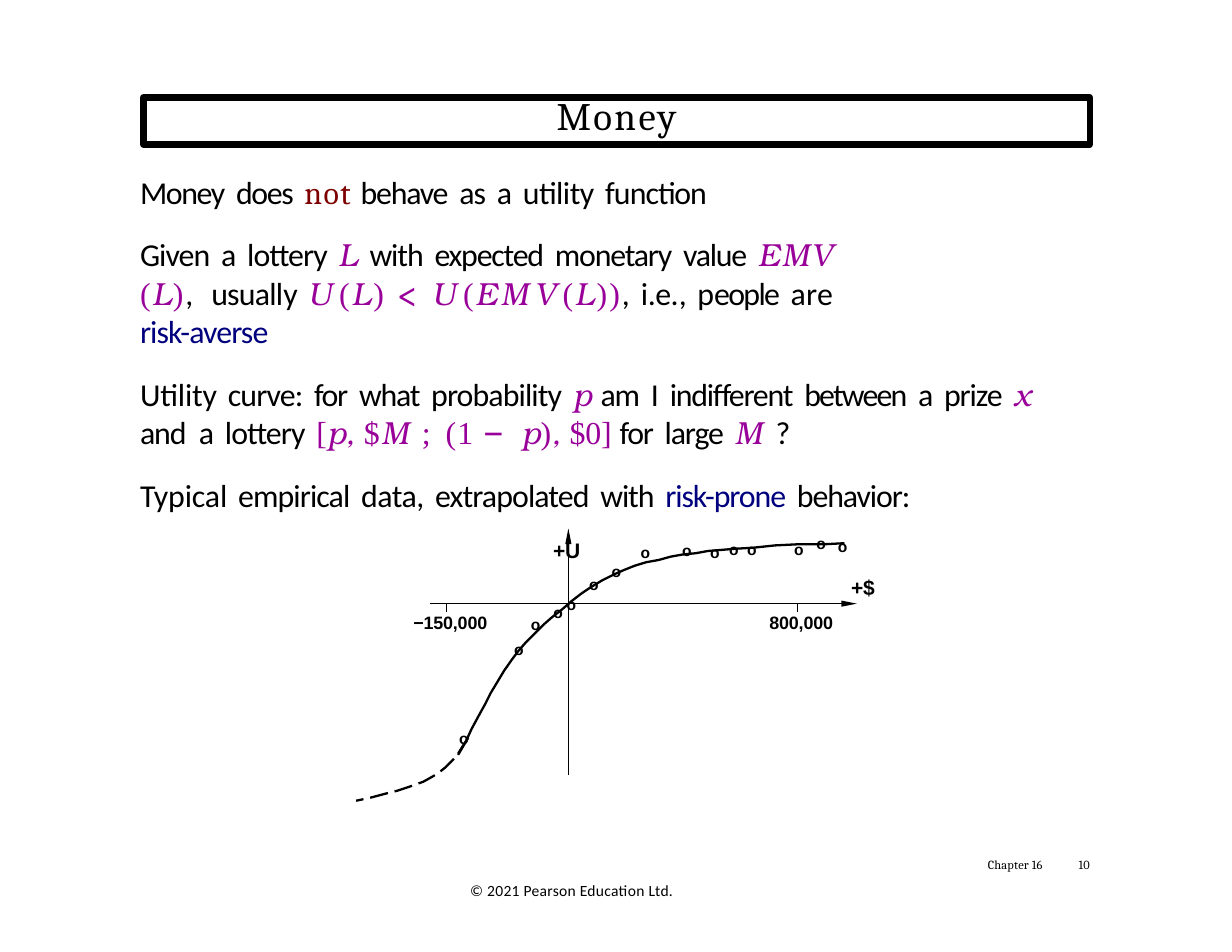
import lxml.etree
import pptx
import pptx.dml.color
import pptx.enum.dml
import pptx.enum.shapes
import pptx.enum.text
import pptx.oxml.ns
import pptx.util

COLUMNS, ROWS = 1100, 850
CELL = pptx.util.Inches(0.01)
CENTER = pptx.enum.text.PP_ALIGN.CENTER
BLACK, NAVY, MAROON, PURPLE = "000000", "00007E", "7E0000", "990099"
WORD_GAP = 2.2

STYLES = {
    "plain": ({"name": "Calibri", "size": 20.5}, BLACK),
    "term": ({"name": "Calibri", "size": 20.5}, NAVY),
    "stress": ({"name": "Cambria", "size": 20.5}, MAROON),
    "math": ({"name": "TeX Gyre Bonum", "size": 20.5, "italic": True}, PURPLE),
    "upright": ({"name": "Times New Roman", "size": 20.5}, PURPLE),
    "minus": ({"name": "DejaVu Sans Mono", "size": 20.5}, PURPLE),
    "title": ({"name": "Cambria", "size": 25}, BLACK),
    "axis": ({"name": "Arial", "size": 13.5, "bold": True}, BLACK),
    "tick": ({"name": "Arial", "size": 11.5, "bold": True}, BLACK),
    "marker": ({"name": "Arial", "size": 10, "bold": True}, BLACK),
    "footer": ({"name": "Cambria", "size": 8}, BLACK),
    "copyright": ({"name": "Calibri", "size": 10}, BLACK),
}

CLAIM = [("plain", "Money does ", -0.9), ("stress", "not ", 0.9), ("plain", "behave ", -0.8),
         ("plain", "as a ", -0.6), ("plain", "utility ", -0.3), ("plain", "function", -0.6)]
LOTTERY = [
    ("plain", "Given a lottery ", -0.6), ("math", "L ", 0.9), ("plain", "with ", -0.7),
    ("plain", "expected monetary value ", -0.8), ("math", "EMV ", 1.4), ("upright", "(", 1.2),
    ("math", "L", 1.2), ("upright", ")", 1.2), ("plain", ",", 1.2), ("plain", " ", 5.7),
    ("plain", "usuall", -0.5), ("plain", "y ", -0.6), ("math", "U ", -1.1), ("upright", "(", 1.3),
    ("math", "L", 1.9), ("upright", ") ", 1.3), ("math", "< ", 2.4), ("math", "U ", -1.1),
    ("upright", "(", 1.3), ("math", "E", 2.2), ("math", "M", 4), ("math", "V ", -2.1),
    ("upright", "(", 1.3), ("math", "L", 1.9), ("upright", "))", 1.3), ("plain", ", ", 0.2),
    ("plain", "i.e.", -0.3), ("plain", ", ", -0.2), ("plain", "p", -0.4),
    ("plain", "eople a", -1.1), ("plain", "r", -0.9), ("plain", "e ", -1.2),
    ("term", "risk-averse", -0.6),
]
CURVE_QUESTION = [
    ("plain", "Utility ", -0.1), ("plain", "curve: ", -0.6), ("plain", "for ", -0.9),
    ("plain", "what ", -0.8), ("plain", "probability ", -0.6), ("math", "p ", -0.6),
    ("plain", "am ", -0.8), ("plain", "I ", 0.1), ("plain", "indifferent ", -0.8),
    ("plain", "between ", -1.2), ("plain", "a ", -0.6), ("plain", "prize ", -0.7),
    ("math", "x ", 0.4), ("plain", "and", -0.7), ("plain", " ", 3.3),
    ("plain", "a lottery ", -0.6), ("upright", "[", -1.1), ("math", "p, ", -0.5),
    ("upright", "$", 1.1), ("math", "M ", 1.1), ("upright", "; ", 2.2), ("upright", "(1 ", 0.8),
    ("minus", "− ", -0.5), ("math", "p", -0.5), ("upright", ")", -0.5), ("math", ", ", -0.5),
    ("upright", "$0] ", -0.1), ("plain", "for ", -0.9), ("plain", "large ", -0.7),
    ("math", "M ", 1.2), ("plain", "?", -0.3),
]
DATA_NOTE = [("plain", "Typical ", -0.1), ("plain", "empirical ", -0.6), ("plain", "data, ", -0.3),
             ("plain", "extrapolated ", -0.6), ("plain", "with ", -0.7),
             ("term", "risk-prone ", -0.7), ("plain", "behavior:", -0.7)]

BODY = [
    (CLAIM, 0, {}),
    (LOTTERY, 210, {"space_before": pptx.util.Pt(15.2), "line_spacing": 1.01}),
    (CURVE_QUESTION, 30, {"space_before": pptx.util.Pt(15.3), "line_spacing": 1.01}),
    (DATA_NOTE, 0, {"space_before": pptx.util.Pt(15.6)}),
    ([("axis", "+U", -0.1)], 89, {"space_before": pptx.util.Pt(15.1), "alignment": CENTER}),
]

MARKERS = [(409, 649), (458, 569), (473, 547), (493, 536), (505, 529), (525, 511), (545, 500),
           (571, 483), (608, 481), (633, 483), (650, 480), (666, 480), (708, 480), (728, 475),
           (747, 477)]
UTILITY_CURVE = [
    (409, 674), (412, 669), (416, 662), (421, 651), (428, 638), (433, 629), (438, 619), (444, 609),
    (450, 599), (457, 589), (463, 581), (470, 573), (478, 565), (485, 558), (493, 551), (502, 544),
    (510, 537), (519, 530), (528, 524), (538, 518), (548, 513), (557, 509), (567, 505), (577, 502),
    (588, 500), (599, 497), (610, 495), (621, 494), (632, 492), (644, 491), (656, 490), (673, 489),
    (692, 487), (712, 486), (735, 486), (754, 485)]
EXTRAPOLATION = [
    (418, 659), (414, 665), (409, 673), (406, 677), (402, 681), (398, 685), (393, 689), (387, 693),
    (378, 698), (367, 702), (355, 706), (343, 709), (332, 712), (318, 715)]


def colour(value):
    return pptx.dml.color.RGBColor.from_string(value)


def apply(target, values):
    for name, value in values.items():
        setattr(target, name, value)


def add_span(para, style, words, spacing):
    font, ink = STYLES[style]
    span = para.add_run()
    span.text = words
    apply(span.font, {**font, "size": pptx.util.Pt(font["size"])})
    span.font.color.rgb = colour(ink)
    span.font._element.set("spc", str(round(spacing * 100)))


def add_prose(para, style, words, spacing):
    for index, word in enumerate(words.split(" ")):
        if index:
            add_span(para, style, " ", max(WORD_GAP, spacing))
        if word:
            add_span(para, style, word, spacing)


def fill_text(box, paragraphs, inset=(1, 0)):
    frame = box.text_frame
    left, top = inset
    apply(frame, {"word_wrap": True, "vertical_anchor": pptx.enum.text.MSO_ANCHOR.TOP,
                  "margin_left": left * CELL, "margin_top": top * CELL,
                  "margin_right": 0, "margin_bottom": 0})
    for index, (spans, right_margin, values) in enumerate(paragraphs):
        para = frame.add_paragraph() if index else frame.paragraphs[0]
        apply(para, values)
        if right_margin:
            para._p.get_or_add_pPr().set("marR", str(right_margin * CELL))
        for span in spans:
            add = add_prose if span[0] in ("plain", "term") else add_span
            add(para, *span)


def add_text(page, place, paragraphs, inset=(1, 0)):
    box = page.shapes.add_textbox(*(n * CELL for n in place))
    fill_text(box, paragraphs, inset)


def add_label(page, place, style, words, spacing, inset=(1, 1), **values):
    add_text(page, place, [([(style, words, spacing)], 0, values)], inset)


def add_title(page):
    place = (128, 87, 845, 42)
    box = page.shapes.add_shape(pptx.enum.shapes.MSO_SHAPE.RECTANGLE, *(n * CELL for n in place))
    box.shadow.inherit = False
    box.fill.background()
    box.line.color.rgb = colour(BLACK)
    box.line.width = pptx.util.Pt(4.08)
    values = {"alignment": CENTER, "line_spacing": pptx.util.Pt(26.1)}
    fill_text(box, [([("title", "Money", 1.6)], 0, values)], (0, 0))


def add_line(page, start, end, arrow=False):
    line = page.shapes.add_connector(pptx.enum.shapes.MSO_CONNECTOR.STRAIGHT,
                                     *(int(n * CELL) for n in start + end))
    line.line.color.rgb = colour(BLACK)
    line.line.width = pptx.util.Pt(0.75)
    if arrow:
        head = lxml.etree.SubElement(line.get_or_add_ln(), pptx.oxml.ns.qn("a:tailEnd"))
        for name, value in {"type": "triangle", "w": "sm", "len": "lg"}.items():
            head.set(name, value)
    lxml.etree.SubElement(line._element.spPr, pptx.oxml.ns.qn("a:effectLst"))


def add_curve(page, points, dash=None):
    builder = page.shapes.build_freeform(*points[0], scale=CELL)
    builder.add_line_segments(points[1:], close=False)
    curve = builder.convert_to_shape()
    curve.shadow.inherit = False
    curve.fill.background()
    curve.line.color.rgb = colour(BLACK)
    apply(curve.line, {"width": pptx.util.Pt(1.48), "dash_style": dash})


def add_utility_plot(page):
    add_line(page, (384, 539), (765, 539), arrow=True)
    add_line(page, (507.5, 692), (507.5, 472), arrow=True)
    for column in (398.5, 712):
        add_line(page, (column, 539), (column, 546))
    add_label(page, (759, 512, 24, 25), "axis", "+$", -0.1)
    add_label(page, (368, 545, 69, 22), "tick", "−150,000", -0.1)
    add_label(page, (686, 545, 60, 22), "tick", "800,000", -0.1)
    for column, row in MARKERS:
        add_label(page, (column, row, 12, 20), "marker", "o", 0.2, inset=(1, 2))
    add_curve(page, UTILITY_CURVE)
    add_curve(page, EXTRAPOLATION, pptx.enum.dml.MSO_LINE.LONG_DASH)


def main():
    deck = pptx.Presentation()
    apply(deck, {"slide_width": COLUMNS * CELL, "slide_height": ROWS * CELL})
    page = deck.slides.add_slide(deck.slide_layouts[6])
    add_title(page)
    add_text(page, (124, 152, 852, 317), BODY, (1, 2))
    add_utility_plot(page)
    tight = pptx.util.Pt(8.6)
    add_label(page, (881, 767, 60, 14), "footer", "Chapter 16", 0.1, (1, 0), line_spacing=tight)
    add_label(page, (959, 767, 21, 14), "footer", "10", 0.2, (4, 0), line_spacing=tight)
    add_label(page, (410, 782, 375, 44), "copyright", "© 2021 Pearson Education Ltd.", 0.2, (10, 5))
    deck.save("out.pptx")


if __name__ == "__main__":
    main()
